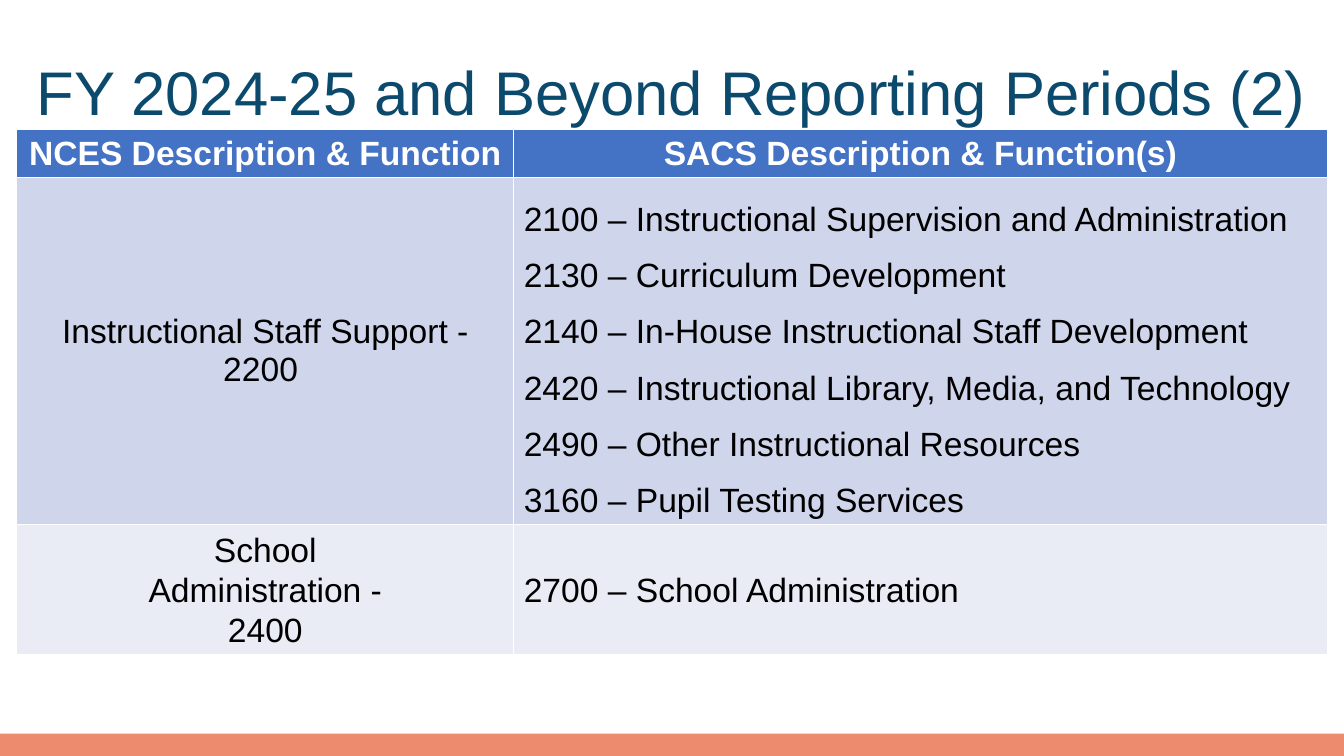
from pptx import Presentation
from pptx.dml.color import RGBColor
from pptx.enum.shapes import MSO_SHAPE as SHAPE
from pptx.enum.text import MSO_ANCHOR as ANCHOR, PP_ALIGN as ALIGN
from pptx.util import Pt

TITLE = "FY 2024-25 and Beyond Reporting Periods (2)"
ROWS = [
    ("NCES Description & Function", "SACS Description & Function(s)"),
    ("Instructional Staff Support - 2200 ", "\n".join([
        "2100 – Instructional Supervision and Administration",
        "2130 – Curriculum Development",
        "2140 – In-House Instructional Staff Development",
        "2420 – Instructional Library, Media, and Technology",
        "2490 – Other Instructional Resources",
        "3160 – Pupil Testing Services",
    ])),
    ("School Administration - 2400", "2700 – School Administration"),
]
FILLS = ["4472C4", "CFD5EA", "E9EBF5"]
SPACING = [(1, 1), (1, 1.5), (1.07, 1.07)]
WIDTHS = [355, 581]
HEIGHTS = [34, 247, 93]
WIDE, HIGH, BAR = 960, 540, 16
LEFT = 12


def color(code):
    return RGBColor.from_string(code)


def style(para, size, code, bold=False):
    for run in para.runs:
        font = run.font
        font.name, font.size, font.bold = "Arial", Pt(size), bold
        font.color.rgb = color(code)


def fill_cell(cell, text, row, col):
    cell.fill.solid()
    cell.fill.fore_color.rgb = color(FILLS[row])
    cell.vertical_anchor = ANCHOR.MIDDLE if row else ANCHOR.TOP
    cell.text_frame.text = text
    for para in cell.text_frame.paragraphs:
        centred = row == 0 or col == 0
        para.alignment = ALIGN.CENTER if centred else ALIGN.LEFT
        para.line_spacing = SPACING[row][col]
        style(para, 24, "000000" if row else "FFFFFF", row == 0)


prs = Presentation()
prs.slide_width, prs.slide_height = Pt(WIDE), Pt(HIGH)
slide = prs.slides.add_slide(prs.slide_layouts[5])

bar = slide.shapes.add_shape(
    SHAPE.RECTANGLE, 0, Pt(HIGH - BAR), Pt(WIDE), Pt(BAR))
bar.shadow.inherit = False
bar.fill.solid()
bar.fill.fore_color.rgb = color("ED8B6F")
bar.line.fill.background()

title = slide.shapes.title
title.left, title.top = Pt(LEFT), Pt(16)
title.width, title.height = Pt(sum(WIDTHS)), Pt(104)
title.text_frame.text = TITLE
title.text_frame.vertical_anchor = ANCHOR.MIDDLE
head = title.text_frame.paragraphs[0]
head.alignment, head.line_spacing = ALIGN.CENTER, 0.9
style(head, 44, "0C4A6D")

table = slide.shapes.add_table(
    len(ROWS), len(WIDTHS), Pt(LEFT), Pt(92.6),
    Pt(sum(WIDTHS)), Pt(sum(HEIGHTS))).table
for column, width in zip(table.columns, WIDTHS):
    column.width = Pt(width)
for row, (texts, height) in enumerate(zip(ROWS, HEIGHTS)):
    table.rows[row].height = Pt(height)
    for col, text in enumerate(texts):
        fill_cell(table.cell(row, col), text, row, col)

# Side indents wrap the school label onto three lines
school = table.cell(2, 0).text_frame.paragraphs[0]
props = school._p.get_or_add_pPr()
for side in ("marL", "marR"):
    props.set(side, str(Pt(72)))

prs.save("out.pptx")
